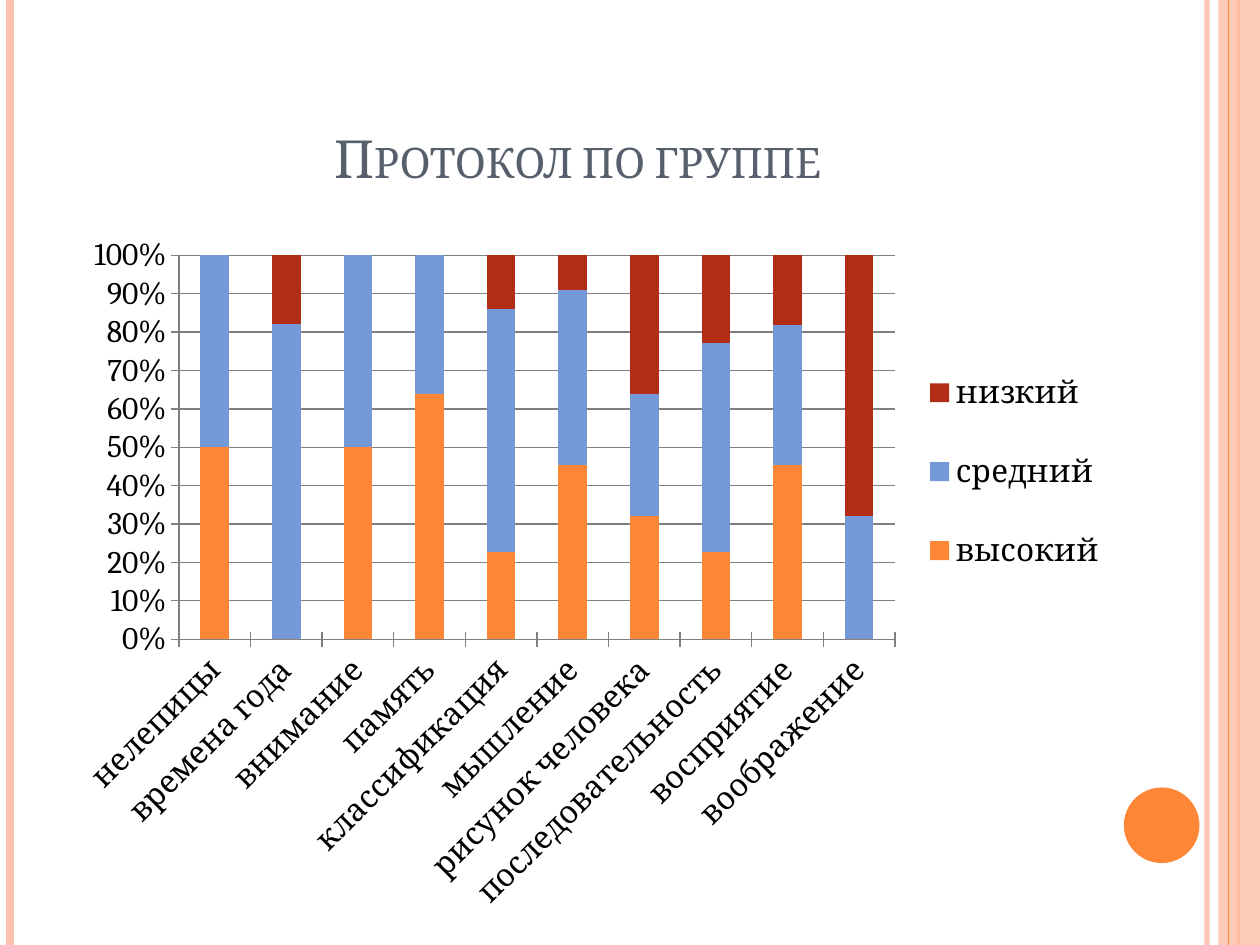
"""Build the group protocol slide with a stacked percentage chart."""
from lxml.etree import SubElement
from pptx import Presentation
from pptx.chart.data import CategoryChartData
from pptx.dml.color import RGBColor
from pptx.enum.chart import XL_CHART_TYPE, XL_LEGEND_POSITION, XL_TICK_MARK
from pptx.enum.shapes import MSO_CONNECTOR, MSO_SHAPE
from pptx.enum.text import MSO_ANCHOR, PP_ALIGN
from pptx.oxml import parse_xml
from pptx.oxml.ns import nsdecls, qn
from pptx.util import Inches, Pt

PEACH = RGBColor(0xFE, 0xC3, 0xAE)
ORANGE = RGBColor(0xFE, 0x86, 0x37)
BLUE = RGBColor(0x75, 0x98, 0xD9)
RED = RGBColor(0xB3, 0x2C, 0x16)
SLATE = RGBColor(0x57, 0x5F, 0x6D)
GRAY = RGBColor(0x80, 0x80, 0x80)
BLACK = RGBColor(0, 0, 0)
FONT = "Cambria"
WIDE, HIGH = 10, 7.5

TITLE = "Протокол по группе"
CATS = ["нелепицы", "времена года", "внимание", "память", "классификация",
        "мышление", "рисунок человека", "последовательность",
        "восприятие", "воображение"]
ROWS = [
    ("высокий", ORANGE, [50, 0, 50, 64, 23, 45, 32, 23, 45, 0]),
    ("средний", BLUE, [50, 82, 50, 36, 64, 45, 32, 55, 36, 32]),
    ("низкий ", RED, [0, 18, 0, 0, 14, 9, 36, 23, 18, 68]),
]
BACK = [(9.58, PEACH, 3, 93), (0.08, PEACH, 4.5, 100), (9.83, ORANGE, 1.5, 100)]
FRONT = [(9.75, ORANGE, 0.75, 100)]
BAND = (MSO_SHAPE.RECTANGLE, (9.67, 0, 0.33, HIGH), PEACH, 87)
DISC = (MSO_SHAPE.OVAL, (8.92, 6.25, 0.6, 0.6), ORANGE, 100)
HEAD_BOX = (0.5, 0.3, 8.17, 1.25)
CHART_BOX = (0.5, 1.75, 8.36, 5.54)
PLOT_BOX = (0.11, 0.05, 0.68, 0.55)
KEY_BOX = (0.82, 0.16, 0.17, 0.4)

HEAD_FONT = {"name": FONT, "size": Pt(30), "bold": False}
CHART_FONT = {"name": FONT, "size": Pt(18), "bold": False}
FRAME = {"word_wrap": True, "vertical_anchor": MSO_ANCHOR.BOTTOM}
PLOT = {"gap_width": 150, "overlap": 100, "vary_by_categories": False}
KEY = {"position": XL_LEGEND_POSITION.RIGHT, "include_in_layout": False}
TICKS = {"major_tick_mark": XL_TICK_MARK.CROSS,
         "minor_tick_mark": XL_TICK_MARK.NONE}
SCALE = {"minimum_scale": 0, "maximum_scale": 1, "major_unit": 0.1,
         "has_major_gridlines": True}
LABELS = {"number_format": "0%", "number_format_is_linked": False}


def style(item, values):
    for name, value in values.items():
        setattr(item, name, value)


def paint(fill, color, alpha=100):
    fill.solid()
    fill.fore_color.rgb = color
    if alpha < 100:
        tint = fill._xPr.find(".//" + qn("a:srgbClr"))
        SubElement(tint, qn("a:alpha"), val=str(alpha * 1000))


def stripe(slide, left, color, width, alpha):
    line = slide.shapes.add_connector(
        MSO_CONNECTOR.STRAIGHT, Inches(left), 0, Inches(left), Inches(HIGH))
    line.line.width = Pt(width)
    paint(line.line.fill, color, alpha)
    SubElement(line._element.spPr, qn("a:effectLst"))


def solid(slide, kind, box, color, alpha):
    shape = slide.shapes.add_shape(kind, *map(Inches, box))
    shape.shadow.inherit = False
    shape.line.fill.background()
    paint(shape.fill, color, alpha)


def title(slide):
    frame = slide.shapes.add_textbox(*map(Inches, HEAD_BOX)).text_frame
    style(frame, FRAME)
    para = frame.paragraphs[0]
    para.alignment = PP_ALIGN.CENTER
    run = para.add_run()
    run.text = TITLE
    style(run.font, HEAD_FONT)
    run.font.color.rgb = SLATE
    run.font._element.set("cap", "small")


def layout(box, inner=False):
    parts = [("layoutTarget", "inner")] if inner else []
    parts += [("xMode", "edge"), ("yMode", "edge"), *zip("xywh", box)]
    body = "".join(f'<c:{tag} val="{val}"/>' for tag, val in parts)
    return parse_xml(f'<c:layout {nsdecls("c")}><c:manualLayout>{body}'
                     '</c:manualLayout></c:layout>')


def place(parent, index, node):
    for old in parent.findall(qn("c:layout")):
        parent.remove(old)
    parent.insert(index, node)


def graph(slide):
    data = CategoryChartData(number_format="0")
    data.categories = CATS
    for name, color, vals in ROWS:
        data.add_series(name, vals)
    chart = slide.shapes.add_chart(
        XL_CHART_TYPE.COLUMN_STACKED_100, *map(Inches, CHART_BOX), data).chart
    style(chart, {"has_title": False, "has_legend": True})
    style(chart.font, CHART_FONT)
    chart.font.color.rgb = BLACK
    style(chart.plots[0], PLOT)
    for row, series in zip(ROWS, chart.plots[0].series):
        paint(series.format.fill, row[1])
    cat, val = chart.category_axis, chart.value_axis
    style(val, SCALE)
    style(val.tick_labels, LABELS)
    for axis in (cat, val):
        style(axis, TICKS)
        style(axis.tick_labels.font, CHART_FONT)
    for part in (cat, val, val.major_gridlines):
        paint(part.format.line.fill, GRAY)
        part.format.line.width = Pt(0.75)
    cat._element.find(".//" + qn("a:bodyPr")).set("rot", "-2700000")
    style(chart.legend, KEY)
    place(chart.legend._element, 1, layout(KEY_BOX))
    area = chart._chartSpace.find(".//" + qn("c:plotArea"))
    place(area, 0, layout(PLOT_BOX, True))


def main():
    deck = Presentation()
    style(deck, {"slide_width": Inches(WIDE), "slide_height": Inches(HIGH)})
    slide = deck.slides.add_slide(deck.slide_layouts[6])
    for row in BACK:
        stripe(slide, *row)
    solid(slide, *BAND)
    for row in FRONT:
        stripe(slide, *row)
    solid(slide, *DISC)
    title(slide)
    graph(slide)
    deck.save("out.pptx")


if __name__ == "__main__":
    main()
